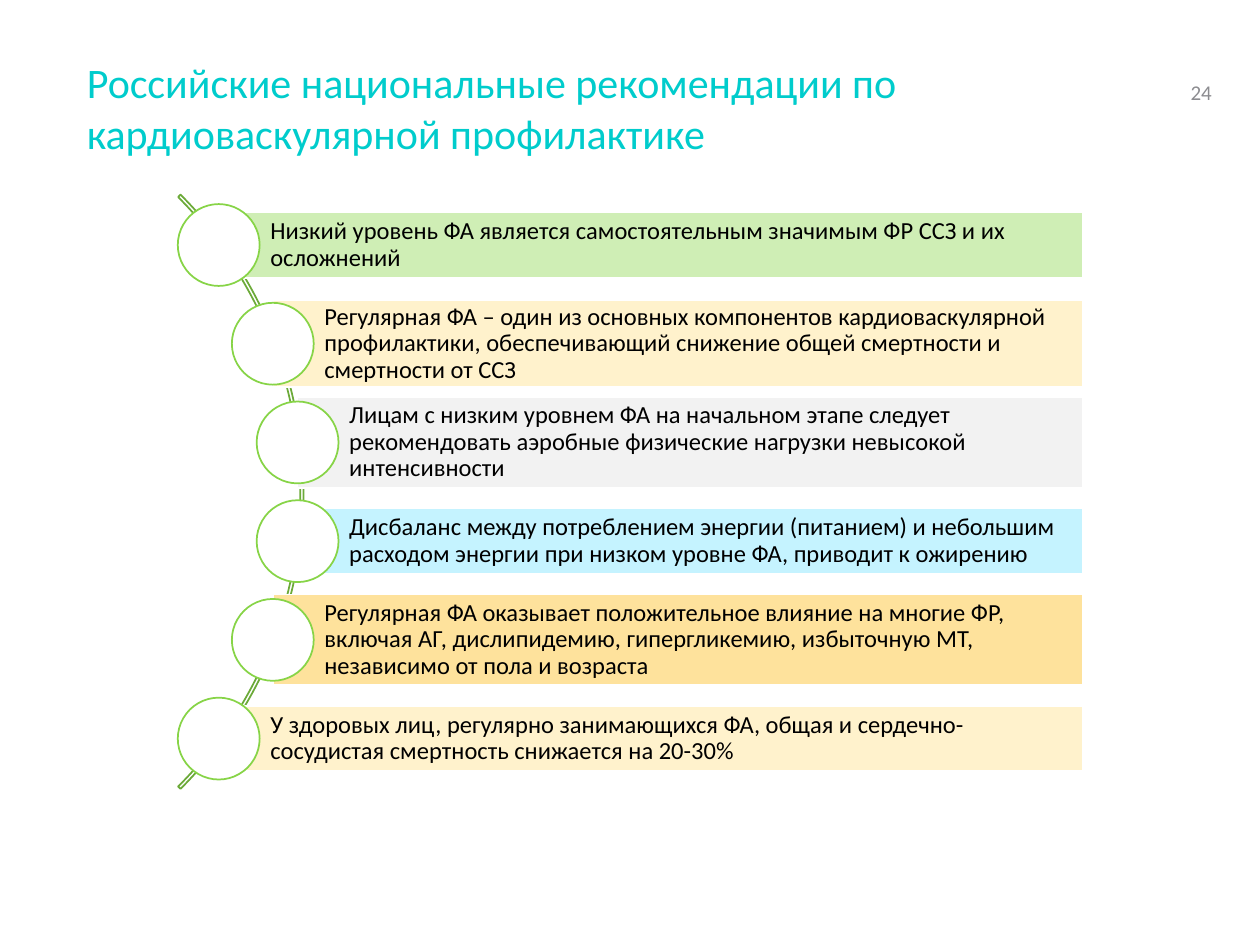
from dataclasses import dataclass

import pptx
import pptx.dml.color
import pptx.enum.shapes
import pptx.enum.text
import pptx.util

Cm = pptx.util.Cm
Pt = pptx.util.Pt
RGBColor = pptx.dml.color.RGBColor
MSO_SHAPE = pptx.enum.shapes.MSO_SHAPE
MSO_ANCHOR = pptx.enum.text.MSO_ANCHOR
PP_ALIGN = pptx.enum.text.PP_ALIGN

TURQUOISE = RGBColor(0x00, 0xCC, 0xCC)
GRAY = RGBColor(0x8C, 0x8C, 0x90)
BLACK = RGBColor(0x00, 0x00, 0x00)
WHITE = RGBColor(0xFF, 0xFF, 0xFF)
ARC_GREEN = RGBColor(0x6C, 0xAA, 0x39)
RING_GREEN = RGBColor(0x87, 0xD4, 0x47)
LIGHT_GREEN = RGBColor(0xCF, 0xEE, 0xB5)
CREAM = RGBColor(0xFF, 0xF2, 0xCC)
LIGHT_GRAY = RGBColor(0xF2, 0xF2, 0xF2)
LIGHT_BLUE = RGBColor(0xC5, 0xF3, 0xFF)
AMBER = RGBColor(0xFE, 0xE2, 0x9C)

FIRST_Y, PITCH = 4.94, 1.99
BAR_RIGHT = 21.83
DOT = 1.65
ARC_SIZE, ARC_LEFT = 16.94, -10.82


@dataclass
class Item:
    text: str
    x: float
    height: float
    fill: RGBColor


ITEMS = [
    Item("Низкий уровень ФА является самостоятельным значимым ФР ССЗ и их осложнений",
         4.41, 1.32, LIGHT_GREEN),
    Item("Регулярная ФА – один из основных компонентов кардиоваскулярной профилактики, "
         "обеспечивающий снижение общей смертности и смертности от ССЗ",
         5.5, 1.75, CREAM),
    Item("Лицам с низким уровнем ФА на начальном этапе следует рекомендовать "
         "аэробные физические нагрузки невысокой интенсивности",
         6.0, 1.83, LIGHT_GRAY),
    Item("Дисбаланс между потреблением энергии (питанием) и небольшим расходом "
         "энергии при низком уровне ФА, приводит к ожирению",
         6.0, 1.32, LIGHT_BLUE),
    Item("Регулярная ФА оказывает положительное влияние на многие ФР, включая АГ, "
         "дислипидемию, гипергликемию, избыточную МТ, независимо от пола и возраста",
         5.5, 1.83, AMBER),
    Item("У здоровых лиц, регулярно занимающихся ФА, общая и сердечно-сосудистая "
         "смертность снижается на 20-30%",
         4.41, 1.32, CREAM),
]


def set_attrs(obj, values: dict) -> None:
    for name, value in values.items():
        setattr(obj, name, value)


def write(sp, text: str, size: float, color: RGBColor, frame: dict, spacing: float = 1.0) -> None:
    tf = sp.text_frame
    set_attrs(tf, {"word_wrap": True, **frame})
    p = tf.paragraphs[0]
    set_attrs(p, {"alignment": PP_ALIGN.LEFT, "line_spacing": spacing})
    r = p.add_run()
    r.text = text
    set_attrs(r.font, {"name": "Calibri", "size": Pt(size)})
    r.font.color.rgb = color


def add_shape(s, kind, x: float, y: float, w: float, h: float, line: RGBColor, fill=None):
    sp = s.shapes.add_shape(kind, Cm(x), Cm(y), Cm(w), Cm(h))
    sp.shadow.inherit = False
    if fill is None:
        sp.fill.background()
    else:
        sp.fill.solid()
        sp.fill.fore_color.rgb = fill
    sp.line.color.rgb = line
    sp.line.width = Pt(1)
    return sp


def add_arc(s) -> None:
    middle = FIRST_Y + PITCH * (len(ITEMS) - 1) / 2
    sp = add_shape(s, MSO_SHAPE.BLOCK_ARC, ARC_LEFT, middle - ARC_SIZE / 2,
                   ARC_SIZE, ARC_SIZE, ARC_GREEN)
    for i, value in enumerate((189, 27, 0.004)):
        sp.adjustments[i] = value


def add_item(s, item: Item, y: float) -> None:
    bar = add_shape(s, MSO_SHAPE.RECTANGLE, item.x, y - item.height / 2,
                    BAR_RIGHT - item.x, item.height, WHITE, item.fill)
    write(bar, item.text, 14, BLACK, {
        "vertical_anchor": MSO_ANCHOR.MIDDLE, "margin_left": Cm(1.04),
        "margin_right": Cm(0.1), "margin_top": Cm(0.1), "margin_bottom": Cm(0.1),
    }, 0.9)
    add_shape(s, MSO_SHAPE.OVAL, item.x - DOT / 2, y - DOT / 2, DOT, DOT, RING_GREEN, WHITE)


def main() -> None:
    prs = pptx.Presentation()
    set_attrs(prs, {"slide_width": Cm(25.4), "slide_height": Cm(19.05)})
    s = prs.slides.add_slide(prs.slide_layouts[6])

    flush = {"margin_left": 0, "margin_right": 0}
    title = s.shapes.add_textbox(Cm(1.75), Cm(1.02), Cm(21.9), Cm(2.62))
    write(title, "Российские национальные рекомендации по кардиоваскулярной профилактике",
          24, TURQUOISE, {**flush, "vertical_anchor": MSO_ANCHOR.TOP})
    title.text_frame.margin_right = Cm(4)
    number = s.shapes.add_textbox(Cm(24), Cm(1.02), Cm(0.97), Cm(1.19))
    write(number, "24", 12, GRAY, {
        **flush, "vertical_anchor": MSO_ANCHOR.BOTTOM,
        "margin_top": Cm(0.1), "margin_bottom": Cm(0.1),
    })

    add_arc(s)
    for i, item in enumerate(ITEMS):
        add_item(s, item, FIRST_Y + i * PITCH)
    prs.save("out.pptx")


if __name__ == "__main__":
    main()
